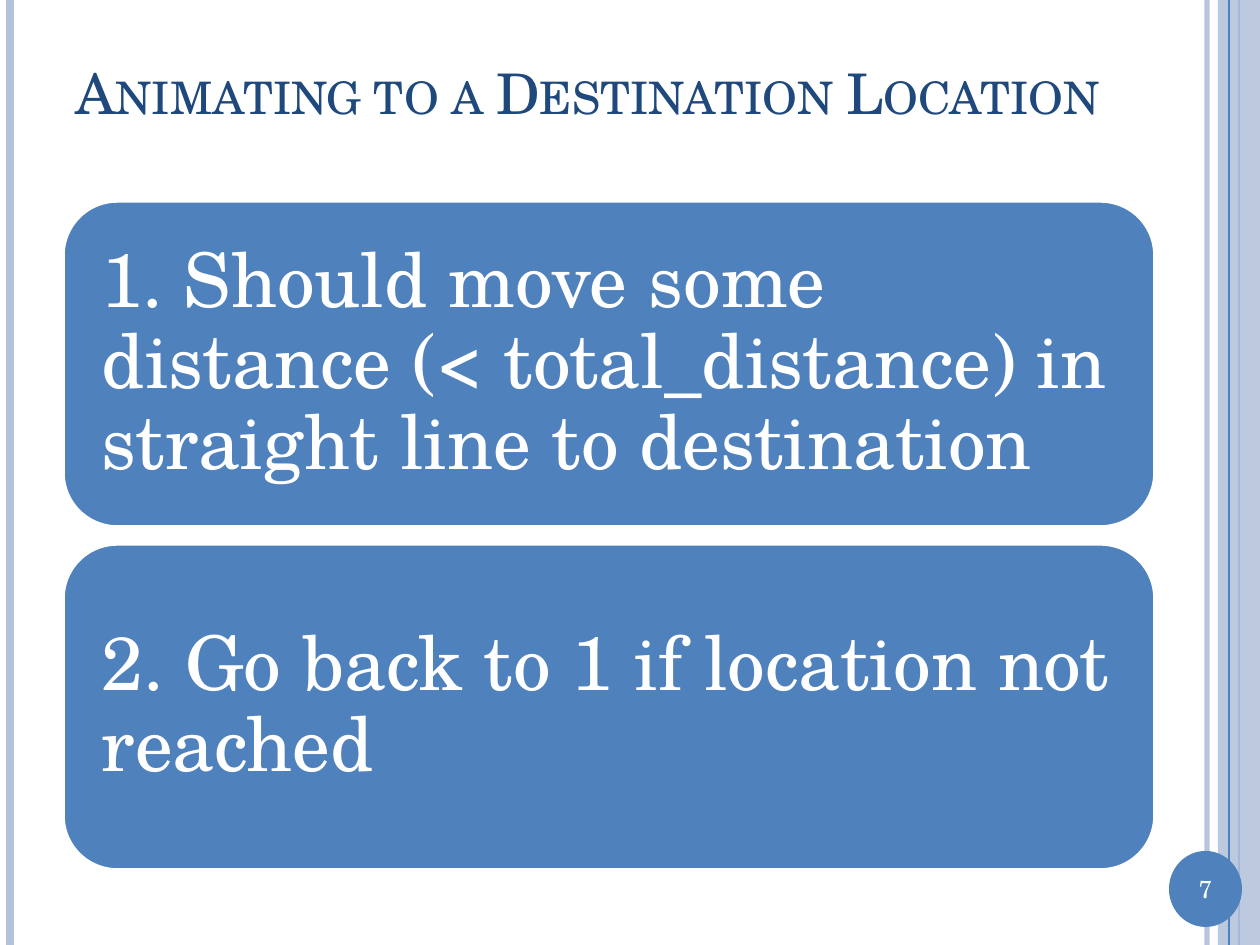
from pptx import Presentation
from pptx import util as u
from pptx.dml import color
from pptx.enum import shapes, text
from pptx.oxml import ns
from lxml import etree

SCALE = u.Inches(1) / 126
WIDTH, HEIGHT = 1260, 945
COLORS = {"accent": "4F81BD", "pale": "B3C1DB", "title": "1F497D", "white": "FFFFFF"}
FONT = "TeX Gyre Schola"


def px(length):
    return u.Emu(round(length * SCALE))


def rgb(name):
    return color.RGBColor.from_string(COLORS[name])


def set_alpha(fill_element, percent):
    for color_element in fill_element.iter(ns.qn("a:srgbClr")):
        etree.SubElement(color_element, ns.qn("a:alpha")).set("val", str(percent * 1000))


class SlideBuilder:
    def __init__(self, presentation):
        self.slide = presentation.slides.add_slide(presentation.slide_layouts[5])

    def label(self, shape, content, size, color_name="white", inset=0,
              align=text.PP_ALIGN.LEFT, spacing=1.0):
        frame = shape.text_frame
        frame.text = content
        frame_format = {
            "word_wrap": True,
            "auto_size": text.MSO_AUTO_SIZE.NONE,
            "vertical_anchor": text.MSO_ANCHOR.MIDDLE,
        }
        for side in ("left", "right", "top", "bottom"):
            frame_format[f"margin_{side}"] = px(inset)
        paragraph = frame.paragraphs[0]
        run = paragraph.runs[0]
        formats = (
            (frame, frame_format),
            (paragraph, {"alignment": align, "line_spacing": spacing}),
            (run.font, {"name": FONT, "size": u.Pt(size)}),
        )
        for target, values in formats:
            for name, value in values.items():
                setattr(target, name, value)
        run.font.color.rgb = rgb(color_name)
        return run

    def title(self, content, left, top, width, height):
        shape = self.slide.shapes.title
        box = {"left": left, "top": top, "width": width, "height": height}
        for name, value in box.items():
            setattr(shape, name, px(value))
        run = self.label(shape, content, 32, "title", inset=12)
        run._r.get_or_add_rPr().set("cap", "small")

    def rule(self, x, color_name, weight, alpha=100):
        line = self.slide.shapes.add_connector(
            shapes.MSO_CONNECTOR.STRAIGHT, px(x), 0, px(x), px(HEIGHT))
        line.line.color.rgb = rgb(color_name)
        line.line.width = u.Pt(weight)
        properties = line._element.spPr
        if alpha < 100:
            set_alpha(properties, alpha)
        etree.SubElement(properties, ns.qn("a:effectLst"))

    def shape(self, kind, left, top, width, height, fill="accent", alpha=100, outline=None):
        shape = self.slide.shapes.add_shape(kind, px(left), px(top), px(width), px(height))
        shape.shadow.inherit = False
        shape.fill.solid()
        shape.fill.fore_color.rgb = rgb(fill)
        if alpha < 100:
            set_alpha(shape._element.spPr, alpha)
        if outline:
            shape.line.color.rgb = rgb(outline)
            shape.line.width = u.Pt(2)
        else:
            shape.line.fill.background()
        return shape

    def step(self, content, top):
        card = self.shape(shapes.MSO_SHAPE.ROUNDED_RECTANGLE, 63, top, 1092, 326, outline="white")
        self.label(card, content, 43, inset=23, spacing=0.9)

    def page_number(self, number):
        badge = self.shape(shapes.MSO_SHAPE.OVAL, 1169, 851, 73, 76)
        self.label(badge, number, 14, align=text.PP_ALIGN.CENTER)


def main():
    presentation = Presentation()
    presentation.slide_width, presentation.slide_height = px(WIDTH), px(HEIGHT)
    builder = SlideBuilder(presentation)

    builder.rule(1207, "pale", 3, alpha=93)
    builder.rule(10, "pale", 4.5)
    builder.rule(1239, "accent", 1.5)
    builder.shape(shapes.MSO_SHAPE.RECTANGLE, 1218, 0, 42, HEIGHT, fill="pale", alpha=87)
    builder.rule(1229, "accent", 0.75)
    builder.page_number("7")

    builder.title("Animating to a Destination Location", 63, 38, 1092, 109)
    steps = (
        "1. Should move some distance (< total_distance) in straight line to destination",
        "2. Go back to 1 if location not reached",
    )
    for index, content in enumerate(steps):
        builder.step(content, 201 + index * 343)

    presentation.save("out.pptx")


if __name__ == "__main__":
    main()
